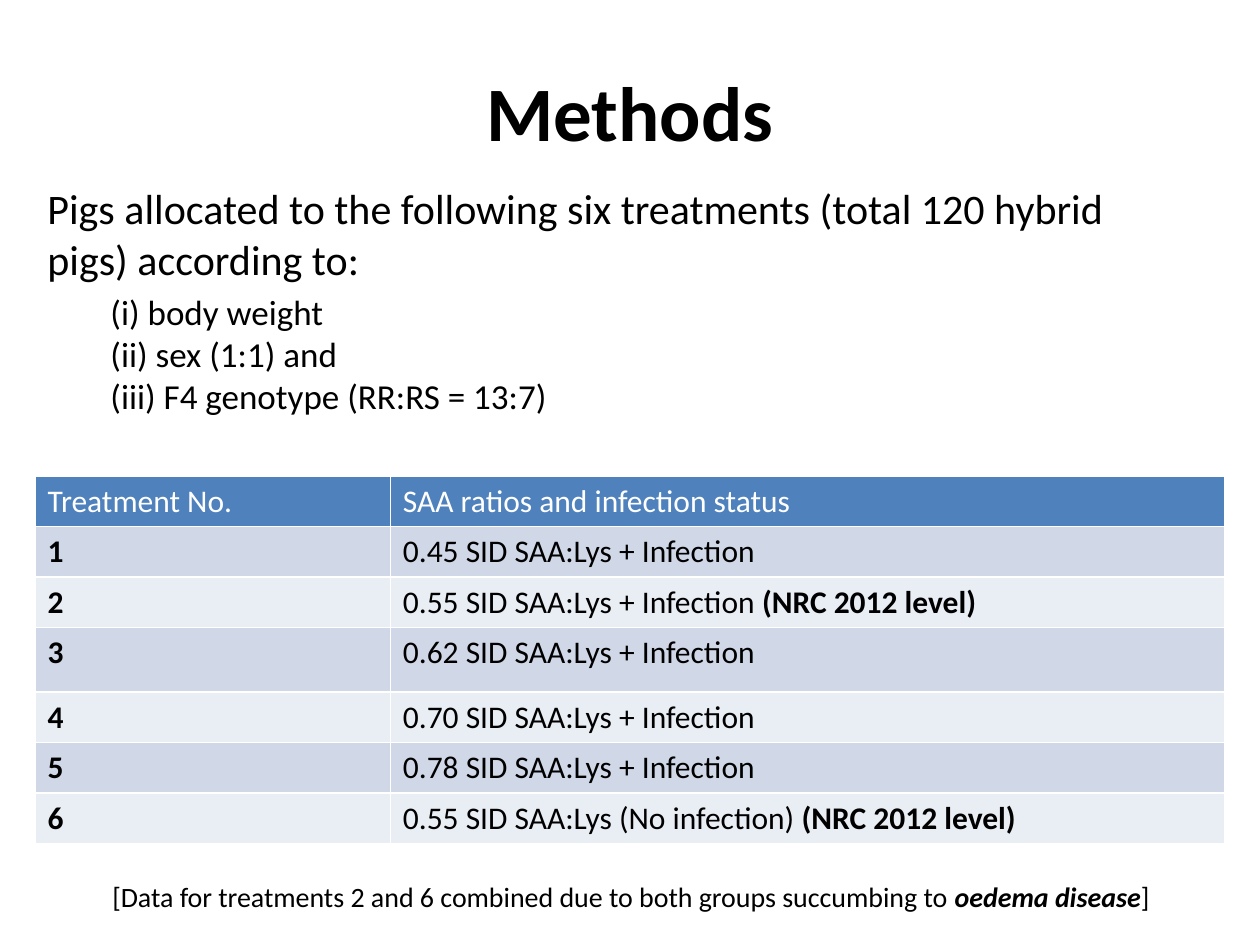
from dataclasses import dataclass
from pptx import Presentation
from pptx.dml.color import RGBColor as RGB
from pptx.enum.text import MSO_ANCHOR as Anchor, PP_ALIGN as Align
from pptx.util import Pt


@dataclass(frozen=True)
class Theme:
    """Colours and type sizes of the slide."""
    font: str = "Calibri"
    ink: str = "000000"
    light: str = "FFFFFF"
    header: str = "4F81BD"
    bands: tuple = ("D0D8E8", "E9EDF4")
    title: int = 44
    lead: int = 24
    item: int = 20
    cell: int = 18
    note: int = 16


THEME = Theme()
LEVEL = "(NRC 2012 level)"
CRITERIA = ["(i) body weight", "(ii) sex (1:1) and", "(iii) F4 genotype (RR:RS = 13:7)"]
TREATMENTS = [
    ("0.45 SID SAA:Lys + Infection", ""),
    ("0.55 SID SAA:Lys + Infection ", LEVEL),
    ("0.62 SID SAA:Lys + Infection", ""),
    ("0.70 SID SAA:Lys + Infection", ""),
    ("0.78 SID SAA:Lys + Infection", ""),
    ("0.55 SID SAA:Lys (No infection) ", LEVEL),
]


def add_text(paragraph, text, size, color=THEME.ink, bold=False, italic=False):
    """Append a formatted run to a paragraph."""
    run = paragraph.add_run()
    run.text = text
    font = run.font
    font.name, font.size, font.bold, font.italic = THEME.font, Pt(size), bold, italic
    font.color.rgb = RGB.from_string(color)


def add_frame(slide, box, anchor=Anchor.TOP):
    """Add a wrapping text box and return its text frame."""
    frame = slide.shapes.add_textbox(*map(Pt, box)).text_frame
    frame.word_wrap = True
    frame.vertical_anchor = anchor
    return frame


def add_title(slide, box):
    """Place the centred slide title."""
    paragraph = add_frame(slide, box, Anchor.MIDDLE).paragraphs[0]
    paragraph.alignment = Align.CENTER
    add_text(paragraph, "Methods", THEME.title, bold=True)


def add_allocation(slide, box, indent=36):
    """Place the allocation sentence and its indented criteria."""
    frame = add_frame(slide, box)
    add_text(frame.paragraphs[0],
             "Pigs allocated to the following six treatments (total 120 hybrid pigs) according to:",
             THEME.lead)
    for index, criterion in enumerate(CRITERIA):
        paragraph = frame.add_paragraph()
        paragraph.space_before = Pt(0 if index else 4)
        paragraph._p.get_or_add_pPr().set("marL", str(Pt(indent)))
        add_text(paragraph, criterion, THEME.item)


def fill_cell(cell, fill, *runs, **style):
    """Fill a cell with a colour and runs given as text and weight."""
    cell.fill.solid()
    cell.fill.fore_color.rgb = RGB.from_string(fill)
    for text, bold in runs:
        if text:
            add_text(cell.text_frame.paragraphs[0], text, THEME.cell, bold=bold, **style)


def add_treatments(slide, box, first_column=203, row_height=26, tall_row=3, tall_height=37):
    """Place the table of treatments."""
    table = slide.shapes.add_table(len(TREATMENTS) + 1, 2, *map(Pt, box)).table
    table.columns[0].width = Pt(first_column)
    table.columns[1].width = Pt(box[2] - first_column)
    for index, row in enumerate(table.rows):
        row.height = Pt(tall_height if index == tall_row else row_height)
    for column, heading in enumerate(["Treatment No.", "SAA ratios and infection status"]):
        fill_cell(table.cell(0, column), THEME.header, (heading, False), color=THEME.light)
    for number, (ratio, remark) in enumerate(TREATMENTS, 1):
        band = THEME.bands[(number - 1) % 2]
        fill_cell(table.cell(number, 0), band, (str(number), True))
        fill_cell(table.cell(number, 1), band, (ratio, False), (remark, True))


def add_note(slide, box):
    """Place the centred note below the table."""
    paragraph = add_frame(slide, box).paragraphs[0]
    paragraph.alignment = Align.CENTER
    add_text(paragraph, "[Data for treatments 2 and 6 combined due to both groups succumbing to ",
             THEME.note)
    add_text(paragraph, "oedema disease", THEME.note, bold=True, italic=True)
    add_text(paragraph, "]", THEME.note)


def main():
    """Build and save the slide."""
    presentation = Presentation()
    presentation.slide_width, presentation.slide_height = Pt(720), Pt(540)
    slide = presentation.slides.add_slide(presentation.slide_layouts[6])
    add_title(slide, (20, 32, 680, 63))
    add_treatments(slide, (20, 272, 680, 193))
    add_allocation(slide, (20, 101, 663, 143))
    add_note(slide, (5, 499, 711, 27))
    presentation.save("out.pptx")


if __name__ == "__main__":
    main()
